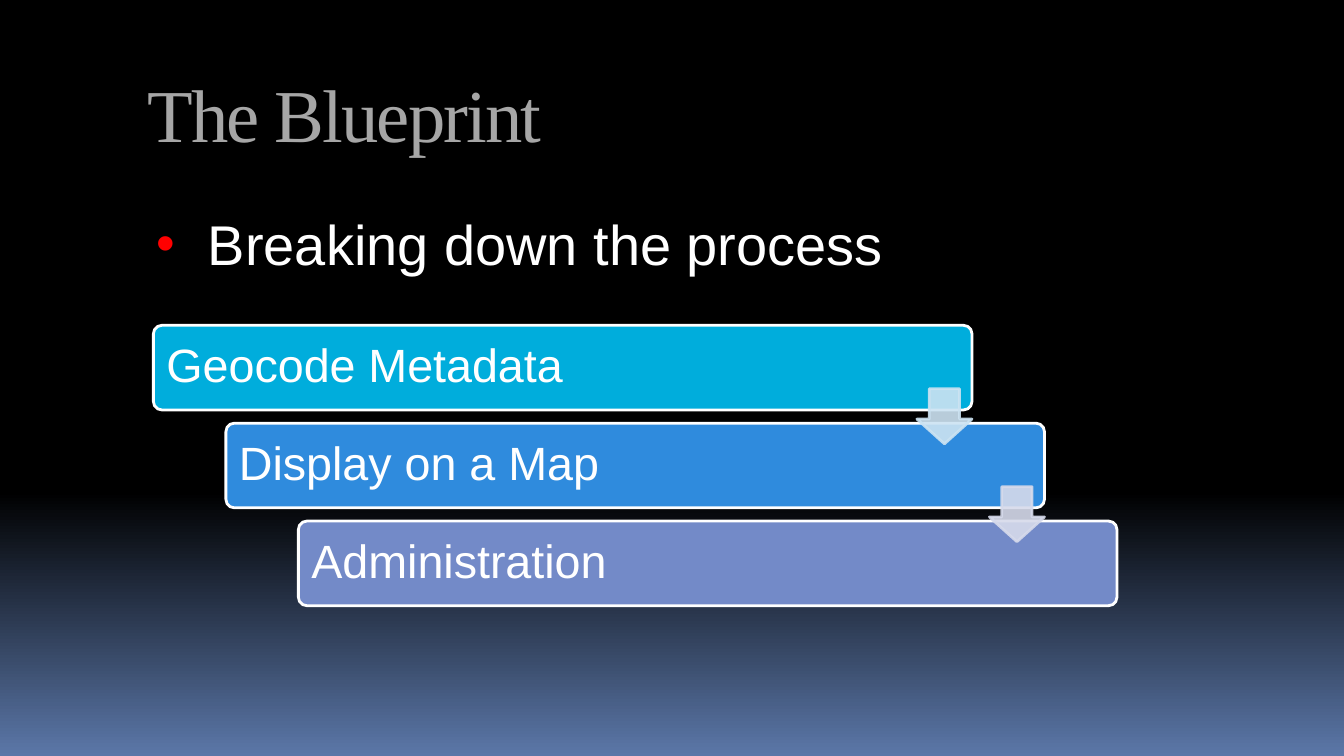
import pptx
import pptx.dml.color
import pptx.enum.shapes
import pptx.enum.text
import pptx.oxml
import pptx.oxml.ns
import pptx.util
from pptx.util import Cm

COLORS = {
    "black": "000000", "horizon": "5B77A8", "title": "A6A6A6",
    "white": "FFFFFF", "bullet": "FF0000",
    "geocode": "00ADDC", "display": "2F8BDD", "admin": "738AC8",
    "first_arrow": "CCE3F2", "second_arrow": "D6DAEB",
}
ANCHOR = pptx.enum.text.MSO_ANCHOR
SHAPE = pptx.enum.shapes.MSO_SHAPE


def write(shape, text, size, color, font="Arial", anchor=ANCHOR.TOP,
          insets=(0.25, 0.25, 0.25, 0.25), line_spacing=None, tracking=None, bullet=None):
    frame = shape.text_frame
    frame.word_wrap = True
    frame.vertical_anchor = anchor
    frame.margin_left, frame.margin_top, frame.margin_right, frame.margin_bottom = map(Cm, insets)
    paragraph = frame.paragraphs[0]
    paragraph.alignment = pptx.enum.text.PP_ALIGN.LEFT
    if line_spacing:
        paragraph.line_spacing = line_spacing
    if bullet:
        properties = paragraph._p.get_or_add_pPr()
        properties.set("marL", str(Cm(1.14)))
        properties.set("indent", str(Cm(-0.97)))
        for xml in (f'<a:buClr {NS}><a:srgbClr val="{bullet}"/></a:buClr>',
                    f'<a:buSzPct {NS} val="95000"/>',
                    f'<a:buFont {NS} typeface="Arial"/>',
                    f'<a:buChar {NS} char="•"/>'):
            properties.append(pptx.oxml.parse_xml(xml))
    run = paragraph.add_run()
    run.text = text
    run.font.name = font
    run.font.size = pptx.util.Pt(size)
    run.font.color.rgb = pptx.dml.color.RGBColor.from_string(color)
    if tracking:
        run._r.get_or_add_rPr().set("spc", str(tracking))


def add_block(kind, left, top, width, height, fill, line, adjustments, opacity=None):
    block = slide.shapes.add_shape(kind, Cm(left), Cm(top), Cm(width), Cm(height))
    block.shadow.inherit = False
    for index, value in enumerate(adjustments):
        block.adjustments[index] = value
    block.fill.solid()
    block.fill.fore_color.rgb = pptx.dml.color.RGBColor.from_string(fill)
    block.line.color.rgb = pptx.dml.color.RGBColor.from_string(line)
    block.line.width = pptx.util.Pt(1.5)
    if opacity:
        for color in block._element.spPr.iter(pptx.oxml.ns.qn("a:srgbClr")):
            color.append(pptx.oxml.parse_xml(f'<a:alpha {NS} val="{opacity * 1000}"/>'))
    return block


NS = pptx.oxml.ns.nsdecls("a")
deck = pptx.Presentation()
deck.slide_width, deck.slide_height = Cm(25.4), Cm(14.29)
slide = deck.slides.add_slide(deck.slide_layouts[6])

# Background: black fading to blue at the bottom
background = slide.background.fill
background.gradient()
gradient = background._fill._gradFill
for child in list(gradient):
    gradient.remove(child)
stops = "".join(
    f'<a:gs pos="{percent * 1000}"><a:srgbClr val="{COLORS[name]}"/></a:gs>'
    for percent, name in ((0, "black"), (65, "black"), (100, "horizon")))
gradient.append(pptx.oxml.parse_xml(f"<a:gsLst {NS}>{stops}</a:gsLst>"))
gradient.append(pptx.oxml.parse_xml(f'<a:lin {NS} ang="5400000" scaled="0"/>'))

# Title
title = slide.shapes.add_textbox(Cm(2.54), Cm(1.07), Cm(21.59), Cm(1.9))
write(title, "The Blueprint", 40, COLORS["title"], font="Times New Roman",
      anchor=ANCHOR.BOTTOM, insets=(0.25, 0, 0.25, 0), tracking=-100)

# Staircase of process steps
step_left, step_top, step_width, step_height = 2.9, 6.15, 15.47, 1.6
shift_right, shift_down = 1.37, 1.85
steps = (("Geocode Metadata", "geocode"), ("Display on a Map", "display"),
         ("Administration", "admin"))
for index, (label, color) in enumerate(steps):
    step = add_block(SHAPE.ROUNDED_RECTANGLE, step_left + index * shift_right,
                     step_top + index * shift_down, step_width, step_height,
                     COLORS[color], COLORS["white"], [0.1])
    write(step, label, 25, COLORS["white"], anchor=ANCHOR.MIDDLE,
          insets=(0.2, 0.2, 0.2, 0.2), line_spacing=0.9)

# Arrows from each step to the next, flush with the right end of the upper step
arrow_size = 1.04
for index, color in enumerate(("first_arrow", "second_arrow")):
    add_block(SHAPE.DOWN_ARROW, step_left + step_width - arrow_size + index * shift_right,
              step_top + 1.2 + index * shift_down, arrow_size, arrow_size,
              COLORS[color], COLORS[color], [0.55, 0.45], opacity=90)

# Bullet line
summary = slide.shapes.add_textbox(Cm(2.54), Cm(3.71), Cm(21.59), Cm(9.53))
write(summary, "Breaking down the process", 30, COLORS["white"], bullet=COLORS["bullet"])

deck.save("out.pptx")
